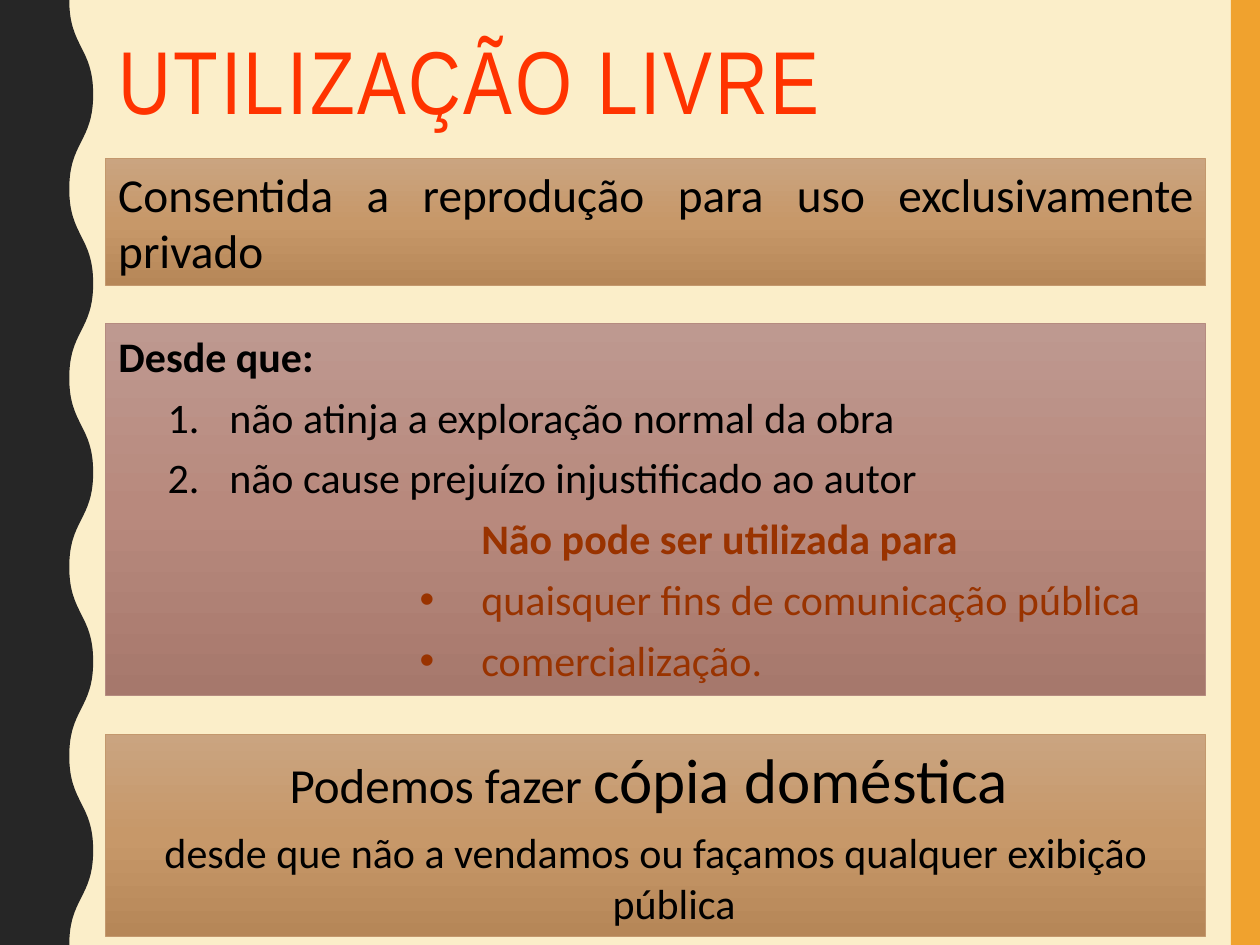
"""Build the slide on free use of protected works."""
from copy import deepcopy
from lxml import etree
from pptx import Presentation, util as u
from pptx.dml.color import RGBColor
from pptx.enum import shapes, text
from pptx.oxml.ns import qn

HUES = {"back": "FBEEC9", "side": "F0A22E", "wave": "262626", "title": "FF3300",
        "ink": "000000", "rust": "993300"}
TAN = ("CAA480", "C79869", "B68758"), "C3986D"
ROSE = ("BE9990", "B8897D", "A6786C"), "B58B80"
TITLE = "UTILIZAÇÃO LIVRE"
LEFT, WIDE = 0.84, 8.73
NUM, DOT = ("buAutoNum", "type", "arabicPeriod"), ("buChar", "char", "•")
BARE = ("buNone",)
# Each line: runs of (text, size), bold, colour, margin, indent, bullet
USE = [([("Consentida a reprodução para uso exclusivamente privado", 27)],
        False, "ink", 0, 0, BARE)]
RULES = [
    ([("Desde que:", 24)], True, "ink", 0, 0, BARE),
    ([("não atinja a exploração normal da obra", 24)], False, "ink", 0.88, -0.49, NUM),
    ([("não cause prejuízo injustificado ao autor", 24)], False, "ink", 0.88, -0.49, NUM),
    ([("Não pode ser utilizada para", 24)], True, "rust", 2.88, 0, BARE),
    ([("quaisquer fins de comunicação pública", 24)], False, "rust", 2.88, -0.49, DOT),
    ([("comercialização.", 24)], False, "rust", 2.88, -0.49, DOT),
]
COPY = [
    ([("Podemos fazer ", 28), ("cópia doméstica ", 36)], False, "ink", 0.29, -0.29, BARE),
    ([("desde que não a vendamos ou façamos qualquer exibição pública", 24)],
     False, "ink", 0.29, -0.29, BARE),
]


def rgb(hue):
    return RGBColor.from_string(HUES.get(hue, hue))


def plain(shape, hue):
    shape.shadow.inherit = False
    shape.fill.solid()
    shape.fill.fore_color.rgb = rgb(hue)
    shape.line.fill.background()


def paint(shape, look):
    hues, edge = look
    shape.fill.gradient()
    shape.fill.gradient_angle = 270
    stops = shape._element.spPr.find(".//" + qn("a:gsLst"))
    stops.insert(1, deepcopy(stops[0]))
    for stop, hue, spot in zip(shape.fill.gradient_stops, hues, (0, 0.5, 1)):
        stop.position = spot
        stop.color.rgb = rgb(hue)
    shape.line.color.rgb = rgb(edge)
    shape.line.width = u.Pt(0.5)


def place(shape, left, top, wide, high):
    shape.left, shape.top = u.Inches(left), u.Inches(top)
    shape.width, shape.height = u.Inches(wide), u.Inches(high)


def write(frame, lines, align, fit):
    frame.word_wrap = True
    frame.auto_size = fit
    frame.vertical_anchor = text.MSO_ANCHOR.TOP
    for i, (runs, bold, hue, left, dent, mark) in enumerate(lines):
        para = frame.add_paragraph() if i else frame.paragraphs[0]
        para.alignment = align
        para.space_before, para.space_after = u.Pt(0), u.Pt(6)
        props = para._p.get_or_add_pPr()
        props.set("marL", str(u.Inches(left)))
        props.set("indent", str(u.Inches(dent)))
        if mark != BARE:
            face = "Arial" if mark == DOT else "Calibri"
            etree.SubElement(props, qn("a:buFont")).set("typeface", face)
        bullet = etree.SubElement(props, qn("a:" + mark[0]))
        if mark != BARE:
            bullet.set(*mark[1:])
        font = para.font
        font.name, font.bold, font.size = "Calibri", bold, u.Pt(runs[0][1])
        font.color.rgb = rgb(hue)
        for words, size in runs:
            run = para.add_run()
            run.text = words
            if size != runs[0][1]:
                run.font.size = u.Pt(size)


def wave(slide, low=550, high=740, half=750, count=10):
    spots = [(high if n % 2 else low, half * n) for n in range(count + 1)]
    pen = slide.shapes.build_freeform(*spots[0], scale=u.Inches(1) / 1000)
    pen.add_line_segments(spots[1:] + [(0, half * count), (0, 0)], close=True)
    shape = pen.convert_to_shape()
    plain(shape, "wave")
    lines = list(shape._element.iter(qn("a:lnTo")))
    for line, (x, y), (end, _) in zip(lines, spots, spots[1:]):
        line.tag = qn("a:cubicBezTo")
        for i, side in enumerate((x, end)):
            knob = etree.Element(qn("a:pt"))
            knob.set("x", str(u.Inches(side / 1000)))
            knob.set("y", str(u.Inches((y + half / 2) / 1000)))
            line.insert(i, knob)
        tip = line[2]
        tip.set("x", str(u.Inches(end / 1000)))
        tip.set("y", str(u.Inches((y + half) / 1000)))
    way = shape._element.find(".//" + qn("a:path"))
    way.set("w", str(shape.width))
    way.set("h", str(shape.height))
    for line in lines[count:]:
        for spot in line:
            for key in ("x", "y"):
                spot.set(key, str(u.Inches(int(spot.get(key)) / 1000)))
    start = way.find(qn("a:moveTo"))[0]
    start.set("x", str(u.Inches(low / 1000)))


def main():
    deck = Presentation()
    deck.slide_width, deck.slide_height = u.Inches(10), u.Inches(7.5)
    slide = deck.slides.add_slide(deck.slide_layouts[1])
    slide.background.fill.solid()
    slide.background.fill.fore_color.rgb = rgb("back")

    side = slide.shapes.add_shape(shapes.MSO_SHAPE.RECTANGLE, 0, 0, 0, 0)
    place(side, 9.77, 0, 0.23, 7.5)
    plain(side, "side")
    wave(slide)

    title, body = slide.placeholders
    place(title, LEFT, 0.25, 8.92, 1.08)
    frame = title.text_frame
    frame.text = TITLE
    frame.vertical_anchor = text.MSO_ANCHOR.TOP
    frame.auto_size = text.MSO_AUTO_SIZE.NONE
    para = frame.paragraphs[0]
    para.alignment, para.line_spacing = text.PP_ALIGN.LEFT, 0.9
    para.font.name, para.font.size = "Arial Narrow", u.Pt(51)
    para.font.color.rgb = rgb("title")
    para.runs[0]._r.get_or_add_rPr().set("spc", "150")

    just, mid = text.PP_ALIGN.JUSTIFY, text.PP_ALIGN.CENTER
    for top, high, look, lines, align in ((1.26, 1.01, TAN, USE, just),
                                          (2.57, 2.95, ROSE, RULES, just),
                                          (5.83, 1.6, TAN, COPY, mid)):
        box, fit = body, text.MSO_AUTO_SIZE.NONE
        if lines is not RULES:
            box = slide.shapes.add_shape(shapes.MSO_SHAPE.RECTANGLE, 0, 0, 0, 0)
            box.shadow.inherit = False
            fit = text.MSO_AUTO_SIZE.SHAPE_TO_FIT_TEXT
        place(box, LEFT, top, WIDE, high)
        paint(box, look)
        write(box.text_frame, lines, align, fit)
    deck.save("out.pptx")


if __name__ == "__main__":
    main()
